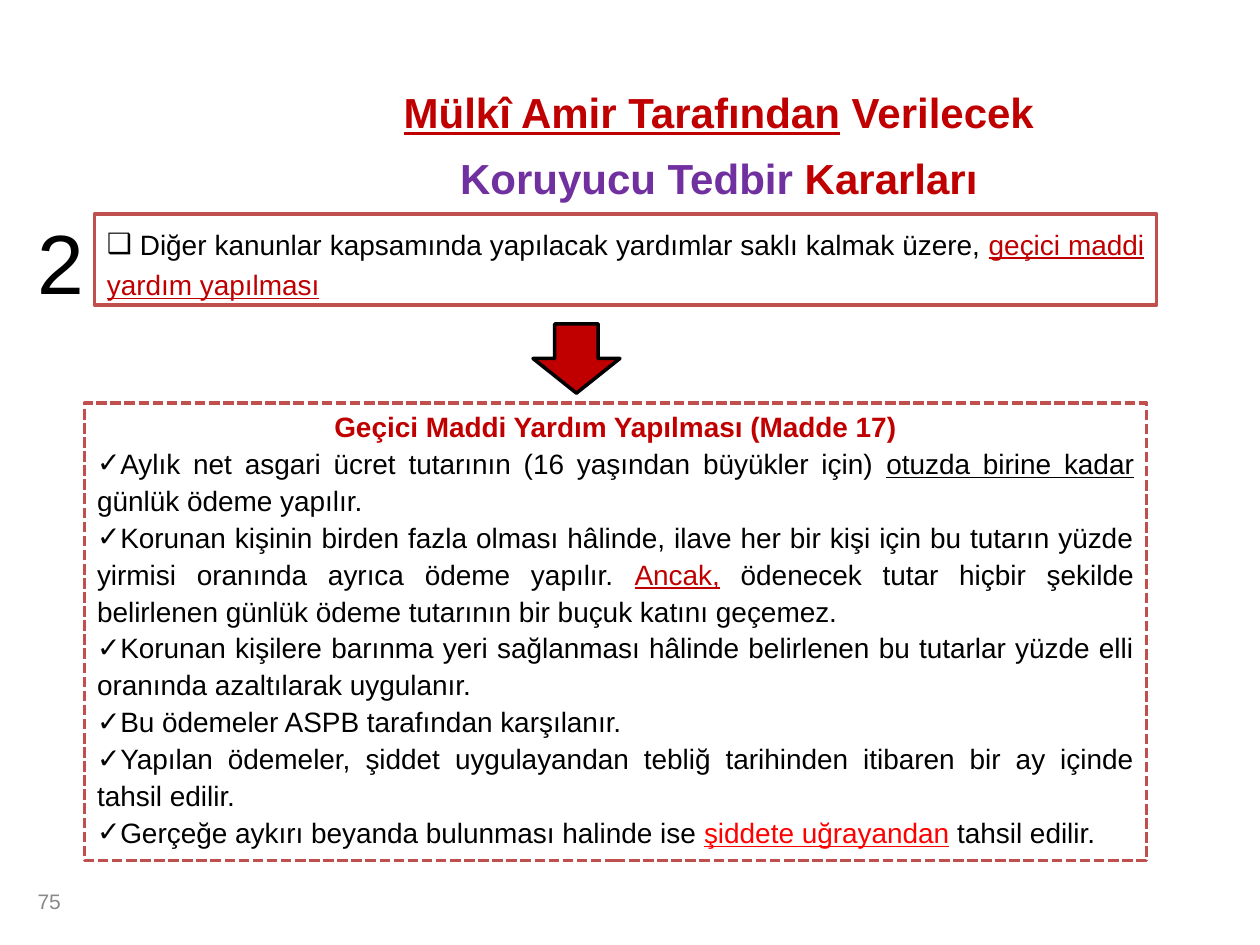
from lxml.etree import SubElement as Sub
from pptx import Presentation
from pptx.dml.color import RGBColor as Color
from pptx.enum.dml import MSO_LINE as Dash
from pptx.enum.shapes import MSO_SHAPE as Kind
from pptx.enum.text import MSO_ANCHOR as Anchor, MSO_AUTO_SIZE as Fit, PP_ALIGN as Align
from pptx.oxml.ns import qn
from pptx.util import Inches, Pt

BLACK = Color(0x00, 0x00, 0x00)
WHITE = Color(0xFF, 0xFF, 0xFF)
GREY = Color(0x89, 0x89, 0x89)
DARK = Color(0xC0, 0x00, 0x00)
RED = Color(0xFF, 0x00, 0x00)
ROSE = Color(0xC0, 0x50, 0x4D)
PURPLE = Color(0x70, 0x30, 0xA0)

AID = [(" Diğer kanunlar kapsamında yapılacak yardımlar saklı kalmak üzere, ",),
       ("geçici maddi yardım yapılması", DARK, True)]
HEAD = "Geçici Maddi Yardım Yapılması (Madde 17)"
RULES = [
    [("Aylık net asgari ücret tutarının (16 yaşından büyükler için) ",),
     ("otuzda birine kadar ", BLACK, True),
     ("günlük ödeme yapılır. ",)],
    [("Korunan kişinin birden fazla olması hâlinde, ilave her bir kişi için "
      "bu tutarın yüzde yirmisi oranında ayrıca ödeme yapılır. ",),
     ("Ancak,", DARK, True),
     (" ödenecek tutar hiçbir şekilde belirlenen günlük ödeme tutarının "
      "bir buçuk katını geçemez. ",)],
    [("Korunan kişilere barınma yeri sağlanması hâlinde belirlenen bu tutarlar "
      "yüzde elli oranında azaltılarak uygulanır.",)],
    [("Bu ödemeler ASPB tarafından karşılanır. ",)],
    [("Yapılan ödemeler, şiddet uygulayandan tebliğ tarihinden itibaren "
      "bir ay içinde tahsil edilir. ",)],
    [("Gerçeğe aykırı beyanda bulunması halinde ise ",),
     ("şiddete uğrayandan", RED, True),
     (" tahsil edilir.",)],
]


def place(shape, box):
    """Move and size a shape to a box given in inches."""
    shape.left, shape.top, shape.width, shape.height = map(Inches, box)
    return shape


def paint(shape, fill, edge, dash=None):
    """Give a shape its fill and outline, without a shadow."""
    shape.fill.solid()
    shape.fill.fore_color.rgb = fill
    shape.line.color.rgb = edge
    shape.line.width = Pt(2)
    if dash:
        shape.line.dash_style = dash
    if not shape.is_placeholder:
        shape.shadow.inherit = False


def frame(shape, anchor=Anchor.TOP):
    """Return the wrapped text frame of a shape."""
    body = shape.text_frame
    body.word_wrap = True
    body.auto_size = Fit.NONE
    body.vertical_anchor = anchor
    return body


def write(para, runs, size=16, bold=False, align=Align.LEFT, gap=1.0, mark=None):
    """Write runs of (text, color, underline) into a paragraph."""
    para.alignment = align
    para.line_spacing = gap
    para.space_before = para.space_after = Pt(0)
    props = para._p.get_or_add_pPr()
    props.set("marL", "0")
    props.set("indent", "0")
    if mark:
        Sub(props, qn("a:buFont"), typeface="Arial")
        Sub(props, qn("a:buChar"), char=mark)
    else:
        Sub(props, qn("a:buNone"))
    for text, *look in runs:
        color, under = look or (BLACK, False)
        run = para.add_run()
        run.text = text
        font = run.font
        font.name, font.size, font.bold = "Arial", Pt(size), bold
        font.underline = under
        font.color.rgb = color


def label(slide, box, runs, anchor=Anchor.TOP, **style):
    """Add a plain one-line text box."""
    shape = slide.shapes.add_textbox(*map(Inches, box))
    write(frame(shape, anchor).paragraphs[0], runs, **style)


def header(slide, box):
    """Fill the title."""
    title = place(slide.shapes.title, box)
    runs = [("Mülkî Amir Tarafından", DARK, True), (" Verilecek ", DARK, False),
            ("Koruyucu Tedbir ", PURPLE, False), ("Kararları", DARK, False)]
    write(frame(title).paragraphs[0], runs, size=24, bold=True,
          align=Align.CENTER, gap=1.3)


def measure(slide, box):
    """Draw the numbered measure, with its arrow below."""
    left, top, width, height = box
    card = slide.shapes.add_shape(Kind.RECTANGLE, *map(Inches, box))
    paint(card, WHITE, ROSE)
    write(frame(card).paragraphs[0], AID, align=Align.JUSTIFY, gap=1.2, mark="❑")
    label(slide, (left - 0.55, top - 0.08, 0.55, 0.91), [("2",)], size=48)
    spot = (left + 3.48, top + height + 0.15, 0.69, 0.55)
    arrow = slide.shapes.add_shape(Kind.DOWN_ARROW, *map(Inches, spot))
    paint(arrow, DARK, BLACK)


def detail(slide, box):
    """Fill the dashed body with its heading and rules."""
    body = place(slide.placeholders[1], box)
    paint(body, WHITE, ROSE, Dash.SQUARE_DOT)
    text = frame(body)
    write(text.paragraphs[0], [(HEAD, DARK, False)], bold=True, align=Align.CENTER)
    for rule in RULES:
        write(text.add_paragraph(), rule, align=Align.JUSTIFY, gap=1.1, mark="✓")


def main():
    """Build and save the slide."""
    deck = Presentation()
    deck.slide_width, deck.slide_height = Inches(10), Inches(7.5)
    slide = deck.slides.add_slide(deck.slide_layouts[1])
    header(slide, (2.95, 0.52, 5.51, 1.1))
    measure(slide, (0.75, 1.7, 8.43, 0.72))
    detail(slide, (0.67, 3.2, 8.43, 3.63))
    label(slide, (0.2, 6.95, 2.33, 0.4), [("75", GREY, False)],
          anchor=Anchor.MIDDLE, size=12)
    deck.save("out.pptx")


if __name__ == "__main__":
    main()
